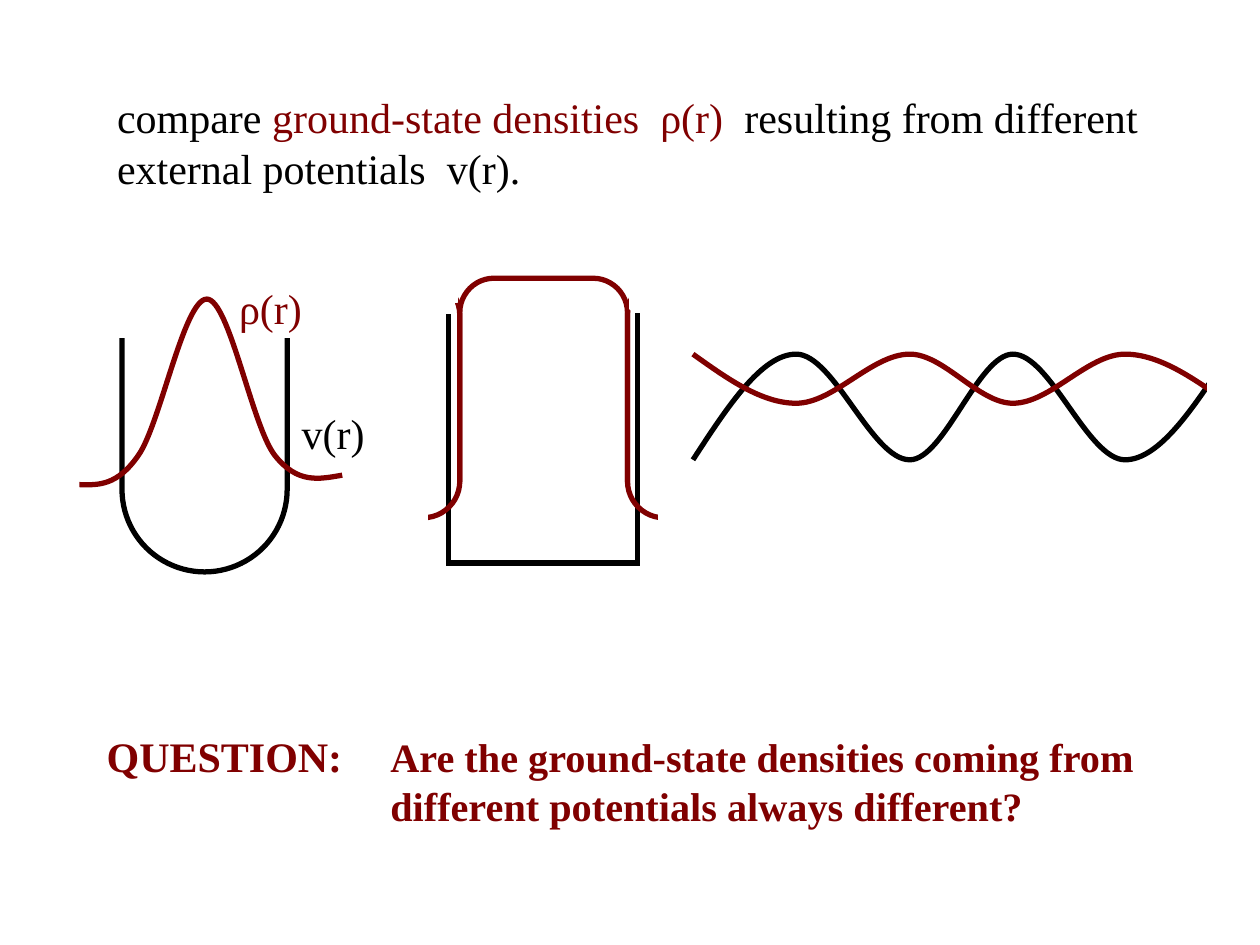
from lxml import etree
from pptx import Presentation
from pptx.dml.color import RGBColor
from pptx.enum.shapes import MSO_SHAPE
from pptx.enum.text import MSO_AUTO_SIZE
from pptx.oxml.ns import qn
from pptx.util import Cm, Pt

BLACK = RGBColor(0x00, 0x00, 0x00)
MAROON = RGBColor(0x80, 0x00, 0x00)
WHITE = RGBColor(0xFF, 0xFF, 0xFF)
FONT = "Times New Roman"
RECTANGLE = MSO_SHAPE.RECTANGLE
ROUNDED = MSO_SHAPE.ROUNDED_RECTANGLE
FIT_SHAPE = MSO_AUTO_SIZE.SHAPE_TO_FIT_TEXT


def add_text(page, place, spans, wrap=True, bold=False):
    """Add one paragraph of (text, size, colour) spans."""
    box = page.shapes.add_textbox(*map(Cm, place))
    frame = box.text_frame
    frame.word_wrap = wrap
    frame.auto_size = FIT_SHAPE
    para = frame.paragraphs[0]
    para.font.name = FONT
    para.font.bold = bold
    for text, size, color in spans:
        span = para.add_run()
        span.text = text
        span.font.size = Pt(size)
        span.font.color.rgb = color
    return para


def style_outline(shape, color):
    """Give the shape a thick line with sharp corners and no fill."""
    shape.shadow.inherit = False
    shape.fill.background()
    shape.line.color.rgb = color
    shape.line.width = Pt(3)
    line = shape._element.spPr.find(qn("a:ln"))
    etree.SubElement(line, qn("a:miter"), lim="800000")


def add_outline(page, place, color, rounding=None):
    kind = RECTANGLE if rounding is None else ROUNDED
    shape = page.shapes.add_shape(kind, *map(Cm, place))
    if rounding is not None:
        shape.adjustments[0] = rounding
    style_outline(shape, color)


def add_cover(page, *place):
    """Add a white block that cuts off part of the outlines below it."""
    cover = page.shapes.add_shape(RECTANGLE, *map(Cm, place))
    cover.shadow.inherit = False
    cover.fill.solid()
    cover.fill.fore_color.rgb = WHITE
    cover.line.color.rgb = WHITE
    cover.line.width = Pt(0.75)


def add_curve(page, points, color):
    """Draw chained cubic Bezier segments: a start, then three points each."""
    start, *others = [(Cm(x), Cm(y)) for x, y in points]
    builder = page.shapes.build_freeform(*start, scale=1.0)
    builder.add_line_segments(others, close=False)
    curve = builder.convert_to_shape()
    steps = list(curve._element.iter(qn("a:lnTo")))
    outline = steps[0].getparent()
    for first in range(0, len(steps), 3):
        segment = etree.SubElement(outline, qn("a:cubicBezTo"))
        for step in steps[first:first + 3]:
            segment.append(step[0])
            outline.remove(step)
    style_outline(curve, color)


def wave_points(knots, start_y, next_y):
    """Alternate between two heights, flat at every inner knot."""
    heights = [(start_y, next_y)[index % 2] for index in range(len(knots))]
    middle = (start_y + next_y) / 2
    last = len(knots) - 2
    points = [(knots[0], start_y)]
    for index in range(last + 1):
        left, right = knots[index:index + 2]
        y1, y2 = heights[index:index + 2]
        third = (right - left) / 3
        points += [
            (left + third, middle if index == 0 else y1),
            (right - third, middle if index == last else y2),
            (right, y2),
        ]
    return points


def add_square_well(page):
    add_cover(page, 11.43, 8.48, 0.84, 0.69)
    add_outline(page, (9.04, 5.84, 3.81, 5.51), BLACK)
    add_cover(page, 8.84, 5.16, 4.24, 1.14)
    add_outline(page, (9.27, 5.61, 3.38, 4.83), MAROON, 0.205)
    add_cover(page, 9.27, 9.73, 3.4, 1.24)
    for left in (12.65, 5.66):
        add_outline(page, (left, 5.61, 3.61, 4.83), MAROON, 0.205)
    add_cover(page, 5.54, 5.08, 3.63, 1.24)
    add_cover(page, 12.7, 5.21, 3.61, 1.02)
    add_cover(page, 13.28, 5.61, 3.43, 5.05)
    add_cover(page, 5.18, 5.84, 3.43, 5.05)
    add_cover(page, 5.59, 4.85, 3.63, 1.24)


def add_round_well(page):
    add_outline(page, (2.46, 5.05, 3.33, 6.48), BLACK, 0.5)
    add_cover(page, 2.24, 4.65, 3.81, 2.16)
    bell = [
        (1.6, 9.77), (1.98, 9.78), (2.36, 9.8), (2.79, 9.18),
        (3.23, 8.56), (3.71, 6.03), (4.17, 6.03),
        (4.62, 6.03), (5.08, 8.59), (5.54, 9.18),
        (6.0, 9.76), (6.43, 9.66), (6.9, 9.58),
    ]
    add_curve(page, bell, MAROON)
    add_text(page, (4.57, 5.57, 1.83, 1.27), [("ρ(r)", 24, MAROON)], wrap=False)
    add_text(page, (5.83, 8.1, 1.78, 1.27), [("v(r)", 24, BLACK)], wrap=False)


def add_periodic_potential(page):
    knots = (13.97, 16.05, 18.34, 20.42, 22.68, 24.77)
    add_curve(page, wave_points(knots, 9.27, 7.14), BLACK)
    add_curve(page, wave_points(knots, 7.14, 8.13), MAROON)
    add_cover(page, 24.34, 6.99, 0.64, 1.8)


def add_question(page):
    para = add_text(page, (1.9, 14.6, 21.59, 2.24), [
        ("QUESTION:", 24, MAROON),
        ("\tAre the ground-state densities coming from different "
         "potentials always different?", 23, MAROON),
    ], bold=True)
    properties = para._p.get_or_add_pPr()
    properties.set("marL", str(Cm(5.72)))
    properties.set("indent", str(-Cm(5.72)))


def main():
    deck = Presentation()
    deck.slide_width, deck.slide_height = Cm(25.4), Cm(19.05)
    page = deck.slides.add_slide(deck.slide_layouts[6])
    add_text(page, (2.11, 1.73, 21.16, 2.29), [
        ("compare ", 24, BLACK),
        ("ground-state densities  ρ(r)", 24, MAROON),
        ("  resulting from different external potentials  v(r).", 24, BLACK),
    ])
    add_question(page)
    add_square_well(page)
    add_round_well(page)
    add_periodic_potential(page)
    deck.save("out.pptx")


if __name__ == "__main__":
    main()
